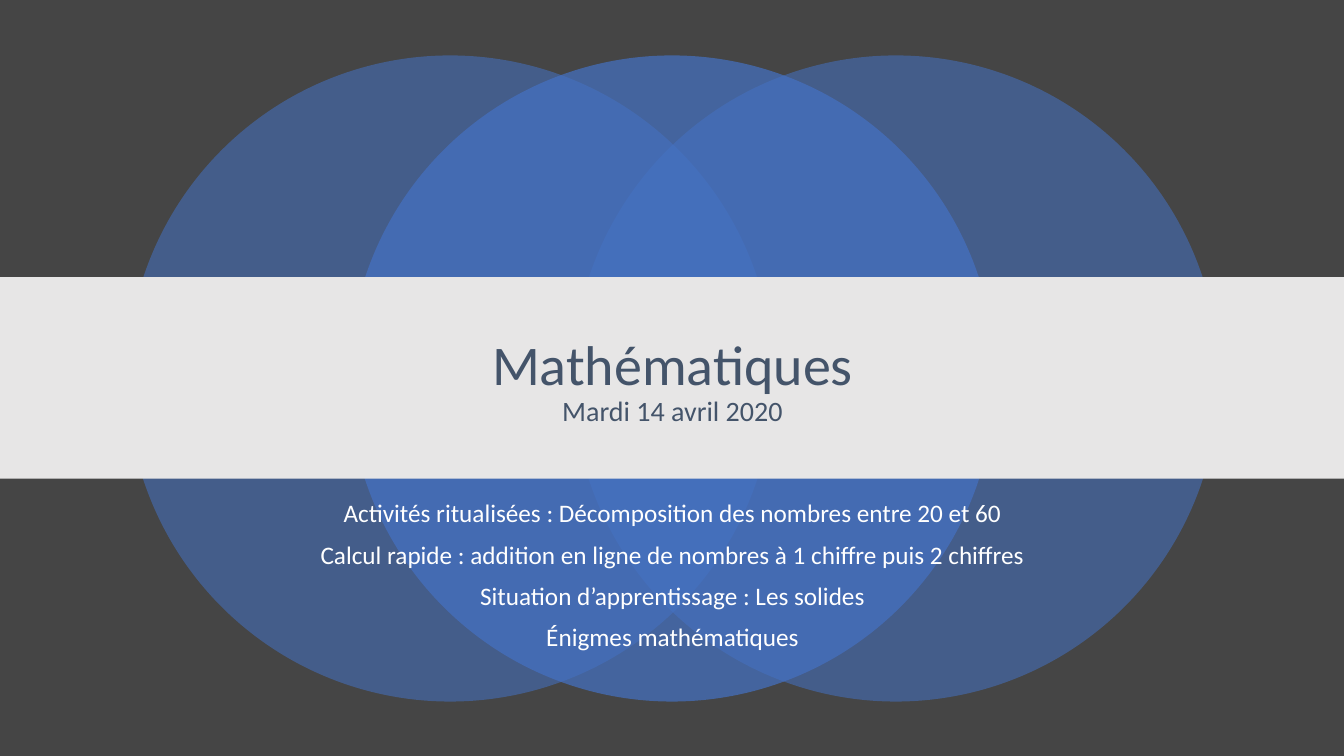
from lxml import etree
from pptx import Presentation
from pptx.dml.color import RGBColor
from pptx.enum import shapes, text
from pptx.oxml.ns import qn
from pptx.util import Inches, Pt

CHARCOAL = RGBColor(0x45, 0x45, 0x45)
BLUE = RGBColor(0x44, 0x72, 0xC4)
LIGHT_GREY = RGBColor(0xE7, 0xE6, 0xE6)
SLATE = RGBColor(0x44, 0x54, 0x6A)
WHITE = RGBColor(0xFF, 0xFF, 0xFF)

SLIDE_WIDTH, SLIDE_HEIGHT = 13.33, 7.5
CIRCLE_SIZE = 6.41
CIRCLES = [(1.26, 55), (5.68, 55), (3.46, 70)]  # left edge, opacity in percent
TITLE = "Mathématiques\vMardi 14 avril 2020"
PROGRAMME = [
    "Activités ritualisées : Décomposition des nombres entre 20 et 60",
    "Calcul rapide : addition en ligne de nombres à 1 chiffre puis 2 chiffres",
    "Situation d’apprentissage : Les solides",
    "Énigmes mathématiques",
]


def add_plain_shape(slide, kind, box, color, opacity=100):
    """Add a shape without outline or shadow; box is left, top, width, height."""
    shape = slide.shapes.add_shape(kind, *map(Inches, box))
    shape.shadow.inherit = False
    shape.line.fill.background()
    shape.fill.solid()
    shape.fill.fore_color.rgb = color
    if opacity < 100:
        tint = shape.fill._xPr.find(".//" + qn("a:srgbClr"))
        etree.SubElement(tint, qn("a:alpha"), val=str(opacity * 1000))


def fill_placeholder(slide, placeholder, box, content, anchor, sizes, color):
    """Place a placeholder in front and format its runs; sizes go run by run."""
    slide.shapes._spTree.append(placeholder._element)
    placeholder.left, placeholder.top, placeholder.width, placeholder.height = map(Inches, box)
    frame = placeholder.text_frame
    frame.text = content
    frame.word_wrap = True
    frame.auto_size = text.MSO_AUTO_SIZE.NONE
    frame.vertical_anchor = anchor
    for index, paragraph in enumerate(frame.paragraphs):
        paragraph.alignment = text.PP_ALIGN.CENTER
        paragraph.line_spacing = 0.9
        paragraph.space_before = Pt(10 if index else 0)
        for run, size in zip(paragraph.runs, sizes):
            run.font.name = "Calibri"
            run.font.size = Pt(size)
            run.font.color.rgb = color


def main():
    deck = Presentation()
    deck.slide_width, deck.slide_height = Inches(SLIDE_WIDTH), Inches(SLIDE_HEIGHT)
    slide = deck.slides.add_slide(deck.slide_layouts[0])
    slide.background.fill.solid()
    slide.background.fill.fore_color.rgb = CHARCOAL

    for left, opacity in CIRCLES:
        add_plain_shape(slide, shapes.MSO_SHAPE.OVAL,
                        (left, 0.55, CIRCLE_SIZE, CIRCLE_SIZE), BLUE, opacity)
    add_plain_shape(slide, shapes.MSO_SHAPE.RECTANGLE,
                    (0, 2.75, SLIDE_WIDTH, 2), LIGHT_GREY)

    fill_placeholder(slide, slide.shapes.title, (1.67, 3.04, 10, 1.51), TITLE,
                     text.MSO_ANCHOR.MIDDLE, (40, 20), SLATE)
    fill_placeholder(slide, slide.placeholders[1], (1.67, 4.92, 10, 1.89),
                     "\n".join(PROGRAMME), text.MSO_ANCHOR.TOP, (18,), WHITE)
    deck.save("out.pptx")


if __name__ == "__main__":
    main()
